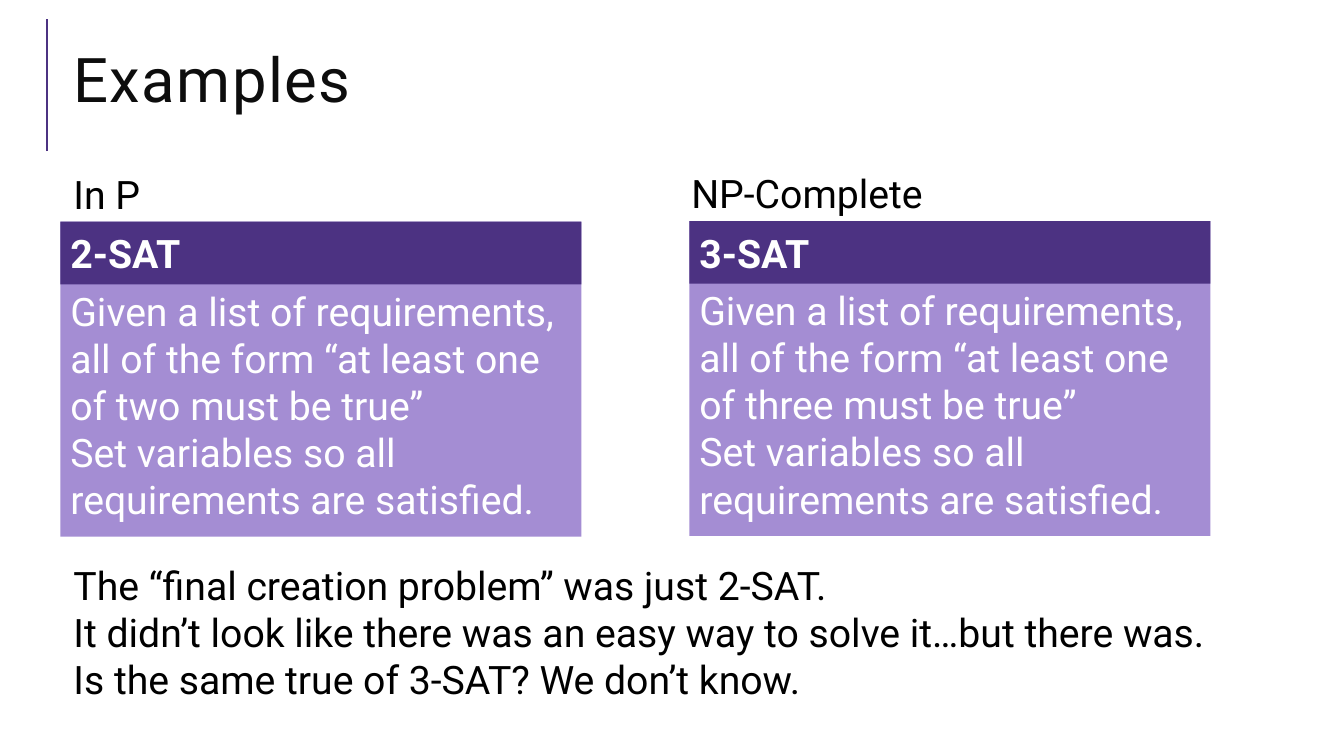
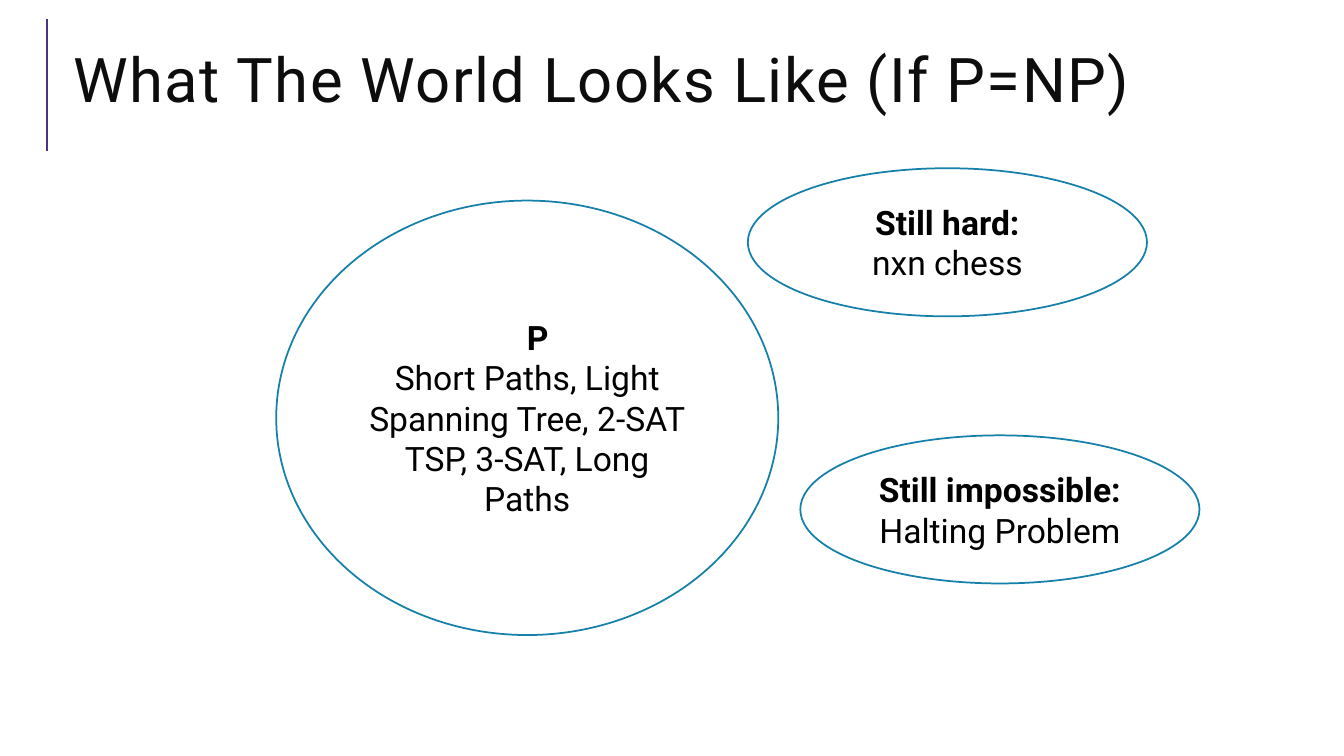
from dataclasses import dataclass

from lxml.etree import SubElement
from pptx import Presentation
from pptx.dml.color import RGBColor
from pptx.enum.shapes import MSO_CONNECTOR, MSO_SHAPE
from pptx.enum.text import MSO_ANCHOR, MSO_AUTO_SIZE, PP_ALIGN
from pptx.oxml.ns import qn
from pptx.util import Pt

# Shared style
FONT = "Roboto"
PURPLE, LAVENDER, BLUE = "4C3282", "A48DD3", "1580A9"
WHITE, BLACK, NEAR_BLACK = "FFFFFF", "000000", "0D0D0D"
TEXT_LEFT = 45.4
CARD_WIDTH, CARD_HEIGHT, HEADER_HEIGHT = 372.2, 225, 44.8


@dataclass
class Card:
    label: str
    label_left: float
    left: float
    top: float
    name: str
    lines: list[str]


@dataclass
class Bubble:
    left: float
    top: float
    width: float
    height: float
    heading: str
    lines: list[str]
    heading_indent: float = 0


CARDS = [
    Card(label, label_left, left, top, f"{count}-SAT", [
        f"Given a list of requirements, all of the form “at least one of {word} must be true”",
        "Set variables so all requirements are satisfied.",
    ])
    for label, label_left, left, top, count, word in [
        ("In P", TEXT_LEFT, 43.2, 158.4, 2, "two"),
        ("NP-Complete", 486.7, 492.5, 157.9, 3, "three"),
    ]
]
CLOSING = [
    "The “final creation problem” was just 2-SAT.",
    "It didn’t look like there was an easy way to solve it…but there was.",
    "Is the same true of 3-SAT? We don’t know.",
]
BUBBLES = [
    Bubble(197.3, 143.3, 358.6, 310.3, "P",
           ["Short Paths, Light Spanning Tree, 2-SAT", "TSP, 3-SAT, Long Paths"], 15),
    Bubble(534.2, 120.2, 285.1, 105.8, "Still hard:", ["nxn chess"]),
    Bubble(571.7, 311, 285.1, 105.8, "Still impossible:", ["Halting Problem"]),
]


def color(code: str) -> RGBColor:
    return RGBColor.from_string(code)


def write(frame, lines: list[str], *, size: float = 28, ink: str = BLACK,
          bold_lines: int = 0, align=PP_ALIGN.LEFT, anchor=MSO_ANCHOR.TOP) -> None:
    """Fill a text frame, one paragraph a line, the first bold_lines in bold."""
    frame.word_wrap = True
    frame.auto_size = MSO_AUTO_SIZE.NONE
    frame.vertical_anchor = anchor
    for index, line in enumerate(lines):
        para = frame.paragraphs[0] if index == 0 else frame.add_paragraph()
        para.alignment = align
        span = para.add_run()
        span.text = line
        span.font.name = FONT
        span.font.size = Pt(size)
        span.font.bold = index < bold_lines
        span.font.color.rgb = color(ink)


def add_text(page, left: float, top: float, width: float, height: float,
             lines: list[str]) -> None:
    box = page.shapes.add_textbox(Pt(left), Pt(top), Pt(width), Pt(height))
    write(box.text_frame, lines)


def add_box(page, kind, left: float, top: float, width: float, height: float,
            fill: str, line: str | None = None):
    box = page.shapes.add_shape(kind, Pt(left), Pt(top), Pt(width), Pt(height))
    box.shadow.inherit = False
    box.fill.solid()
    box.fill.fore_color.rgb = color(fill)
    if line:
        box.line.color.rgb = color(line)
        box.line.width = Pt(1.25)
    else:
        box.line.fill.background()
    return box


def add_page(deck, title: str):
    """Add a slide with the vertical rule and the formatted title."""
    page = deck.slides.add_slide(deck.slide_layouts.get_by_name("Title Only"))
    rule = page.shapes.add_connector(MSO_CONNECTOR.STRAIGHT, Pt(33.8), Pt(108), Pt(33.8), Pt(13.7))
    rule.line.color.rgb = color(PURPLE)
    rule.line.width = Pt(1.5)
    SubElement(rule._element.spPr, qn("a:effectLst"))

    box = page.shapes.title
    box.left, box.top, box.width, box.height = Pt(TEXT_LEFT), Pt(20.9), Pt(880.6), Pt(79.9)
    write(box.text_frame, [title], size=44, ink=NEAR_BLACK, anchor=MSO_ANCHOR.MIDDLE)
    para = box.text_frame.paragraphs[0]
    para.line_spacing = 0.8
    para.runs[0].font._element.set("spc", "100")  # letter spacing of 1 pt
    return page


def add_card(page, card: Card) -> None:
    add_text(page, card.label_left, card.top - 40.3, 367.2, 41, [card.label])
    body = add_box(page, MSO_SHAPE.RECTANGLE, card.left, card.top, CARD_WIDTH, CARD_HEIGHT, LAVENDER)
    body.text_frame.margin_top = Pt(HEADER_HEIGHT + 2)
    write(body.text_frame, card.lines, ink=WHITE)
    header = add_box(page, MSO_SHAPE.RECTANGLE, card.left, card.top, CARD_WIDTH, HEADER_HEIGHT, PURPLE)
    write(header.text_frame, [card.name], ink=WHITE, bold_lines=1, anchor=MSO_ANCHOR.MIDDLE)


def add_bubble(page, bubble: Bubble) -> None:
    box = add_box(page, MSO_SHAPE.OVAL, bubble.left, bubble.top, bubble.width, bubble.height, WHITE, BLUE)
    write(box.text_frame, [bubble.heading, *bubble.lines], size=24, bold_lines=1,
          align=PP_ALIGN.CENTER, anchor=MSO_ANCHOR.MIDDLE)
    if bubble.heading_indent:
        properties = box.text_frame.paragraphs[0]._p.get_or_add_pPr()
        properties.set("marL", str(Pt(bubble.heading_indent)))


def main() -> None:
    deck = Presentation()
    deck.slide_width, deck.slide_height = Pt(960), Pt(540)

    # Two problems side by side
    page = add_page(deck, "Examples")
    for card in CARDS:
        add_card(page, card)
    add_text(page, TEXT_LEFT, 397.4, 826.6, 108.7, CLOSING)

    # Complexity classes as bubbles
    page = add_page(deck, "What The World Looks Like (If P=NP)")
    for bubble in BUBBLES:
        add_bubble(page, bubble)

    deck.save("out.pptx")


if __name__ == "__main__":
    main()
